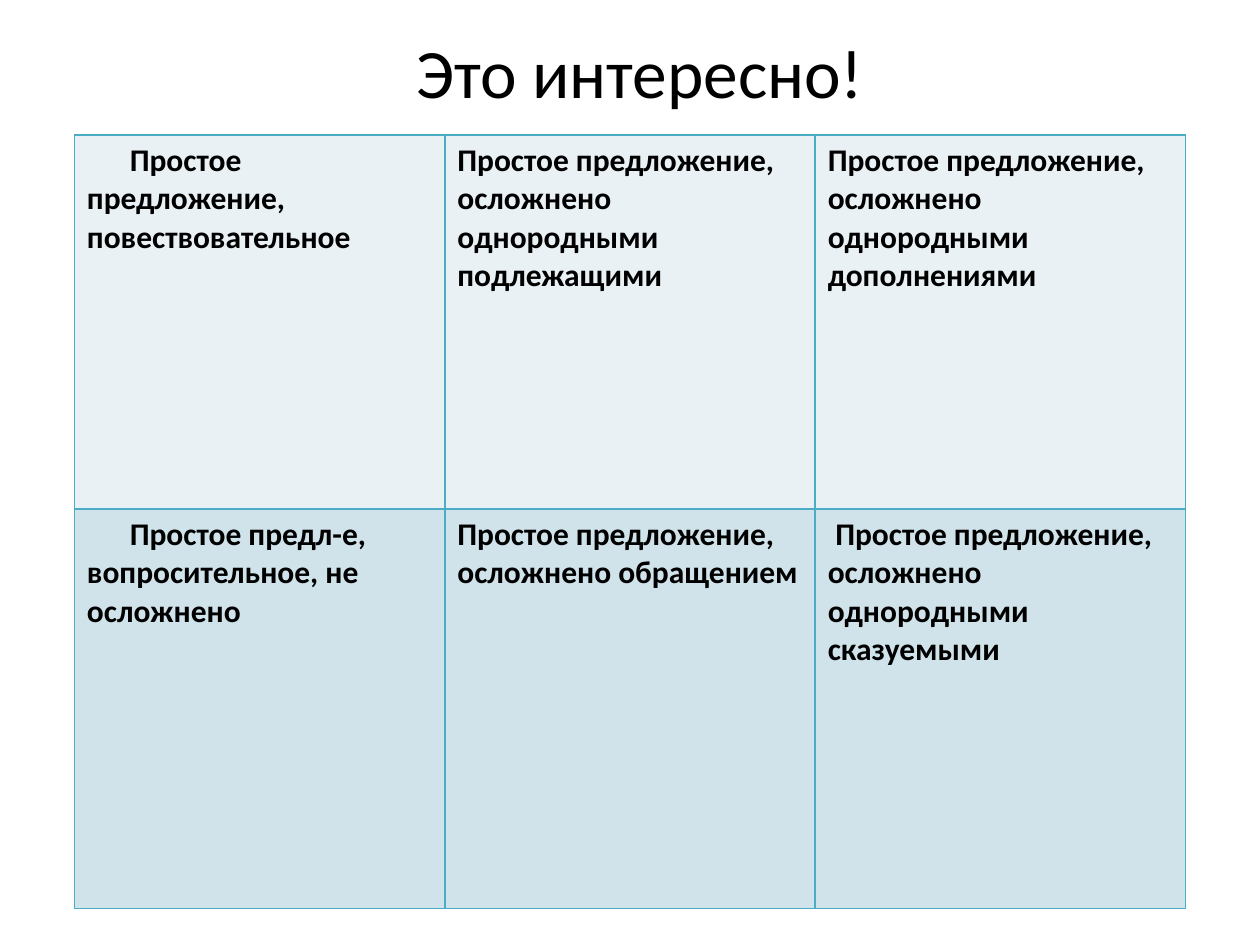
from dataclasses import dataclass

from lxml import etree
from pptx import Presentation
from pptx.dml.color import RGBColor
from pptx.enum.text import MSO_ANCHOR, PP_ALIGN
from pptx.oxml.ns import qn
from pptx.util import Inches, Pt

CENTER = PP_ALIGN.CENTER
MIDDLE = MSO_ANCHOR.MIDDLE
BLANK = 6


@dataclass(frozen=True)
class Theme:
    font: str = "Calibri"
    ink: str = "000000"
    edge: str = "4BACC6"
    bands: tuple = ("E9F1F5", "D0E3EA")
    title: float = 39.6
    body: float = 18
    line: float = 1


class Deck:
    def __init__(self, theme):
        self.theme = theme
        self.file = Presentation()
        self.file.slide_width = Inches(10)
        self.file.slide_height = Inches(7.5)
        self.slide = self.file.slides.add_slide(self.file.slide_layouts[BLANK])

    def add_text(self, para, text, size, bold=False):
        run = para.add_run()
        run.text = text
        font = run.font
        font.name = self.theme.font
        font.size = Pt(size)
        font.bold = bold
        font.color.rgb = RGBColor.from_string(self.theme.ink)

    def title(self, text, left, top, width, height):
        box = self.slide.shapes.add_textbox(
            Inches(left), Inches(top), Inches(width), Inches(height))
        frame = box.text_frame
        frame.word_wrap = True
        frame.margin_top = frame.margin_bottom = 0
        frame.vertical_anchor = MIDDLE
        para = frame.paragraphs[0]
        para.alignment = CENTER
        self.add_text(para, text, self.theme.title)

    def border(self, cell):
        props = cell._tc.get_or_add_tcPr()
        for side in ("a:lnL", "a:lnR", "a:lnT", "a:lnB"):
            line = etree.SubElement(props, qn(side), w=str(Pt(self.theme.line)))
            fill = etree.SubElement(line, qn("a:solidFill"))
            etree.SubElement(fill, qn("a:srgbClr"), val=self.theme.edge)

    def cell(self, cell, text, indent, color):
        """Fill one cell; indent is that of the first line, in inches."""
        self.border(cell)
        cell.fill.solid()
        cell.fill.fore_color.rgb = RGBColor.from_string(color)
        para = cell.text_frame.paragraphs[0]
        props = para._p.get_or_add_pPr()
        props.set("marL", "0")
        props.set("indent", str(Inches(indent)))
        self.add_text(para, text, self.theme.body, bold=True)

    def table(self, rows, left, top, width, heights):
        count = len(rows[0])
        table = self.slide.shapes.add_table(
            len(rows), count, Inches(left), Inches(top),
            Inches(width), Inches(sum(heights))).table
        for col in table.columns:
            col.width = Inches(width / count)
        for r, (row, height) in enumerate(zip(rows, heights)):
            table.rows[r].height = Inches(height)
            for c, (text, indent) in enumerate(row):
                self.cell(table.cell(r, c), text, indent, self.theme.bands[r])


def main():
    types = [
        [("Простое предложение, повествовательное", 0.34),
         ("Простое предложение, осложнено однородными подлежащими", 0),
         ("Простое предложение, осложнено однородными дополнениями", 0)],
        [("Простое предл-е, вопросительное, не осложнено", 0.34),
         ("Простое предложение, осложнено обращением", 0),
         ("Простое предложение, осложнено однородными сказуемыми", 0.06)],
    ]
    deck = Deck(Theme())
    deck.title("Это интересно!", 0.83, 0.22, 8.5, 0.68)
    deck.table(types, 0.59, 1.07, 8.82, (2.97, 3.17))
    deck.file.save("out.pptx")


if __name__ == "__main__":
    main()
